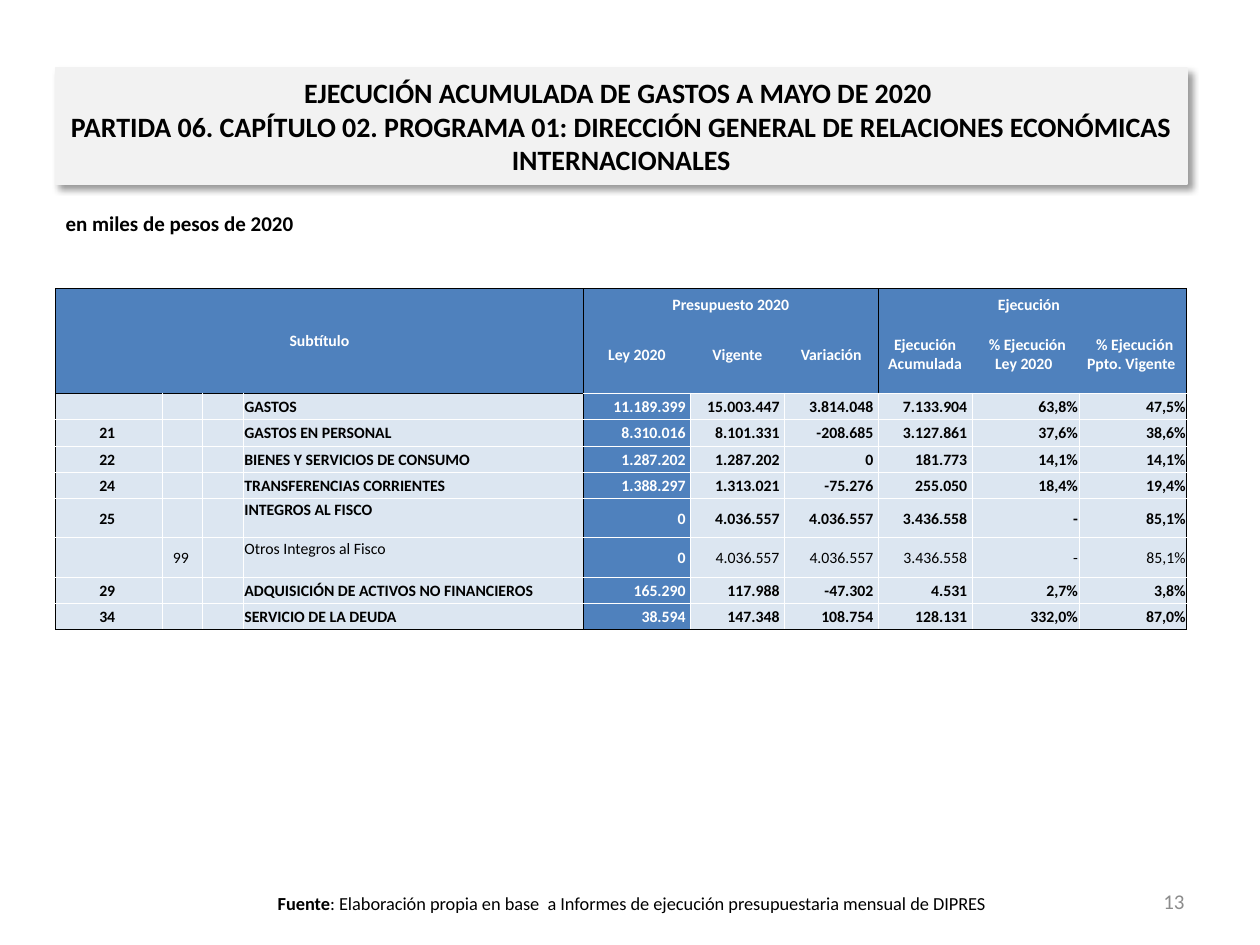
from dataclasses import dataclass

from lxml import etree
from pptx import Presentation
from pptx.dml.color import RGBColor
from pptx.enum.text import MSO_ANCHOR, MSO_AUTO_SIZE, PP_ALIGN
from pptx.oxml.ns import qn
from pptx.util import Inches, Pt

LEFT, CENTER, RIGHT = PP_ALIGN.LEFT, PP_ALIGN.CENTER, PP_ALIGN.RIGHT
TOP, MIDDLE, BOTTOM = MSO_ANCHOR.TOP, MSO_ANCHOR.MIDDLE, MSO_ANCHOR.BOTTOM
GROW = MSO_AUTO_SIZE.SHAPE_TO_FIT_TEXT

SLIDE_WIDTH, SLIDE_HEIGHT = Inches(10), Inches(7.5)
GRID_COLUMNS, GRID_ROWS = 100, 75
HEADER_ROWS = 2
LABEL_COLUMN, LAW_COLUMN, EXECUTION_COLUMN = 3, 4, 7

COLUMN_WIDTHS = [8.5, 3.2, 3.2, 27, 8.5, 7.45, 7.45, 7.45, 8.5, 8.55]
ROW_HEIGHTS = [2.1, 6.2, 2.1, 2.1, 2.1, 2.1, 3.1, 3.1, 2.1, 2.1]
TALL_ROW = 3

COLUMN_HEADINGS = ["Ley 2020", "Vigente", "Variación", "Ejecución Acumulada",
                   " % Ejecución Ley 2020 ", " % Ejecución Ppto. Vigente "]

# subtitle code, item code, label, three budget amounts, executed amount, two percentages
EXPENSES = [
    ("", "", "GASTOS", "11.189.399", "15.003.447", "3.814.048", "7.133.904", "63,8%", "47,5%"),
    ("21", "", "GASTOS EN PERSONAL", "8.310.016", "8.101.331", "-208.685", "3.127.861",
     "37,6%", "38,6%"),
    ("22", "", "BIENES Y SERVICIOS DE CONSUMO", "1.287.202", "1.287.202", "0", "181.773",
     "14,1%", "14,1%"),
    ("24", "", "TRANSFERENCIAS CORRIENTES", "1.388.297", "1.313.021", "-75.276", "255.050",
     "18,4%", "19,4%"),
    ("25", "", "INTEGROS AL FISCO", "0", "4.036.557", "4.036.557", "3.436.558", "-", "85,1%"),
    ("", "99", "Otros Integros al Fisco", "0", "4.036.557", "4.036.557", "3.436.558",
     "-", "85,1%"),
    ("29", "", "ADQUISICIÓN DE ACTIVOS NO FINANCIEROS", "165.290", "117.988", "-47.302",
     "4.531", "2,7%", "3,8%"),
    ("34", "", "SERVICIO DE LA DEUDA", "38.594", "147.348", "108.754", "128.131",
     "332,0%", "87,0%"),
]


@dataclass(frozen=True)
class Theme:
    font: str = "Calibri"
    ink: str = "000000"
    paper: str = "FFFFFF"
    muted: str = "8C8C8C"
    banner: str = "F2F2F2"
    accent: str = "4F81BD"
    tint: str = "DCE6F1"
    title_size: float = 16
    body_size: float = 12
    source_size: float = 10.5
    table_size: float = 9
    rule: float = 0.5


def grid_x(columns):
    return int(SLIDE_WIDTH * columns / GRID_COLUMNS)


def grid_y(rows):
    return int(SLIDE_HEIGHT * rows / GRID_ROWS)


class BudgetSlide:
    def __init__(self, slide, theme):
        self.slide, self.theme = slide, theme

    def place(self, shape, left, top, width, height):
        shape.left, shape.top = grid_x(left), grid_y(top)
        shape.width, shape.height = grid_x(width), grid_y(height)

    def add_run(self, paragraph, text, size, color, bold=False):
        run = paragraph.add_run()
        run.text = text
        run.font.name, run.font.size, run.font.bold = self.theme.font, Pt(size), bold
        run.font.color.rgb = RGBColor.from_string(color)

    def title(self, lines, *box):
        theme, banner = self.theme, self.slide.shapes.title
        self.place(banner, *box)
        banner.fill.solid()
        banner.fill.fore_color.rgb = RGBColor.from_string(theme.banner)
        banner.line.color.rgb = RGBColor.from_string(theme.banner)
        banner.line.width = Pt(0.75)
        effects = etree.SubElement(banner.element.spPr, qn("a:effectLst"))
        shadow = etree.SubElement(effects, qn("a:outerShdw"), blurRad=str(Pt(4)),
                                  dist=str(Pt(3)), dir="2700000", algn="tl", rotWithShape="0")
        shade = etree.SubElement(shadow, qn("a:srgbClr"), val=theme.ink)
        etree.SubElement(shade, qn("a:alpha"), val="40000")
        frame = banner.text_frame
        frame.auto_size, frame.vertical_anchor = GROW, MIDDLE
        heading = frame.paragraphs[0]
        heading.alignment = CENTER
        for number, line in enumerate(lines):
            if number:
                heading.add_line_break()
            self.add_run(heading, line, theme.title_size, theme.ink, True)

    def body(self, text, *box):
        units = self.slide.placeholders[1]
        self.place(units, *box)
        paragraph = units.text_frame.paragraphs[0]
        paragraph.space_before = Pt(0)
        properties = paragraph._p.get_or_add_pPr()
        properties.set("marL", "0")
        properties.set("indent", "0")
        etree.SubElement(properties, qn("a:buNone"))
        self.add_run(paragraph, text, self.theme.body_size, self.theme.ink, True)

    def note(self, runs, size, color, alignment, *box):
        """Add a footer text from (text, bold) runs."""
        footer = self.slide.shapes.add_textbox(0, 0, 0, 0)
        self.place(footer, *box)
        frame = footer.text_frame
        frame.word_wrap, frame.vertical_anchor = True, MIDDLE
        frame.paragraphs[0].alignment = alignment
        for text, bold in runs:
            self.add_run(frame.paragraphs[0], text, size, color, bold)

    def table(self, left, top):
        width, height = sum(COLUMN_WIDTHS), sum(ROW_HEIGHTS)
        table = self.slide.shapes.add_table(
            len(ROW_HEIGHTS), len(COLUMN_WIDTHS),
            grid_x(left), grid_y(top), grid_x(width), grid_y(height)).table
        for column, share in zip(table.columns, COLUMN_WIDTHS):
            column.width = grid_x(share)
        for row, share in zip(table.rows, ROW_HEIGHTS):
            row.height = grid_y(share)
        table.cell(0, 0).merge(table.cell(1, LABEL_COLUMN))
        table.cell(0, LAW_COLUMN).merge(table.cell(0, EXECUTION_COLUMN - 1))
        table.cell(0, EXECUTION_COLUMN).merge(table.cell(0, len(COLUMN_WIDTHS) - 1))
        for row in range(len(ROW_HEIGHTS)):
            for column in range(len(COLUMN_WIDTHS)):
                self.style_cell(table.cell(row, column), row, column)
        return table

    def style_cell(self, cell, row, column):
        last_row, last_column = row + 1, column + 1
        if cell.is_merge_origin:
            last_row, last_column = row + cell.span_height, column + cell.span_width
        edges = {"a:lnL": self.vertical_rule(row, column),
                 "a:lnR": self.vertical_rule(row, last_column),
                 "a:lnT": self.horizontal_rule(row, column),
                 "a:lnB": self.horizontal_rule(last_row, column)}
        properties = cell._tc.get_or_add_tcPr()
        for tag, color in edges.items():
            line = etree.SubElement(properties, qn(tag), w=str(Pt(self.theme.rule)))
            if color:
                fill = etree.SubElement(line, qn("a:solidFill"))
                etree.SubElement(fill, qn("a:srgbClr"), val=color)
            else:
                etree.SubElement(line, qn("a:noFill"))
        accented = row < HEADER_ROWS or column == LAW_COLUMN
        cell.fill.solid()
        cell.fill.fore_color.rgb = RGBColor.from_string(
            self.theme.accent if accented else self.theme.tint)
        cell.margin_left = cell.margin_right = cell.margin_top = Inches(0.01)
        cell.margin_bottom = 0

    def vertical_rule(self, row, boundary):
        header = row < HEADER_ROWS
        if boundary in (0, LAW_COLUMN, len(COLUMN_WIDTHS)) or (
                header and boundary == EXECUTION_COLUMN):
            return self.theme.ink
        return None if header else self.theme.paper

    def horizontal_rule(self, boundary, column):
        if boundary in (0, len(ROW_HEIGHTS)) or (
                boundary == HEADER_ROWS and column < LAW_COLUMN):
            return self.theme.ink
        return None if boundary < HEADER_ROWS else self.theme.paper

    def write_cell(self, cell, text, color, alignment=CENTER, anchor=MIDDLE, bold=True):
        cell.vertical_anchor = anchor
        paragraph = cell.text_frame.paragraphs[0]
        paragraph.alignment = alignment
        if text:
            self.add_run(paragraph, text, self.theme.table_size, color, bold)
        else:
            etree.SubElement(paragraph._p, qn("a:endParaRPr"),
                             sz=str(int(self.theme.table_size * 100)))

    def expense_table(self, left, top):
        theme, table = self.theme, self.table(left, top)
        self.write_cell(table.cell(0, 0), "Subtítulo", theme.paper)
        self.write_cell(table.cell(0, LAW_COLUMN), "Presupuesto 2020", theme.paper, anchor=BOTTOM)
        self.write_cell(table.cell(0, EXECUTION_COLUMN), "Ejecución  ", theme.paper, anchor=BOTTOM)
        for column, heading in enumerate(COLUMN_HEADINGS, LAW_COLUMN):
            self.write_cell(table.cell(1, column), heading, theme.paper)
        for row, (code, item, label, *figures) in enumerate(EXPENSES, HEADER_ROWS):
            bold = not item
            for column, mark in enumerate((code, item, "")):
                self.write_cell(table.cell(row, column), mark and f"{mark} ", theme.ink, bold=bold)
            self.write_cell(table.cell(row, LABEL_COLUMN), label, theme.ink, LEFT,
                            TOP if ROW_HEIGHTS[row] > TALL_ROW else MIDDLE, bold)
            for column, figure in enumerate(figures, LAW_COLUMN):
                law = column == LAW_COLUMN
                text = f"{figure} " if column <= EXECUTION_COLUMN else figure
                self.write_cell(table.cell(row, column), text,
                                theme.paper if law else theme.ink, RIGHT, bold=bold or law)


def main():
    deck = Presentation()
    deck.slide_width, deck.slide_height = SLIDE_WIDTH, SLIDE_HEIGHT
    theme = Theme()
    page = BudgetSlide(deck.slides.add_slide(deck.slide_layouts[1]), theme)
    page.title(["EJECUCIÓN ACUMULADA DE GASTOS A MAYO DE 2020 ",
                "PARTIDA 06. CAPÍTULO 02. PROGRAMA 01: DIRECCIÓN GENERAL DE RELACIONES "
                "ECONÓMICAS INTERNACIONALES"], 4.4, 5.4, 89.8, 9.2)
    page.body("en miles de pesos de 2020", 4.2, 16.2, 90, 5)
    page.expense_table(4.4, 22.9)
    page.note([("Fuente", True),
               (": Elaboración propia en base  a Informes de ejecución presupuestaria "
                "mensual de DIPRES", False)],
              theme.source_size, theme.ink, CENTER, 4.2, 70.5, 91.9, 2.4)
    page.note([("13", False)], theme.body_size, theme.muted, RIGHT, 71.7, 69.5, 23.3, 4)
    deck.save("out.pptx")


if __name__ == "__main__":
    main()
